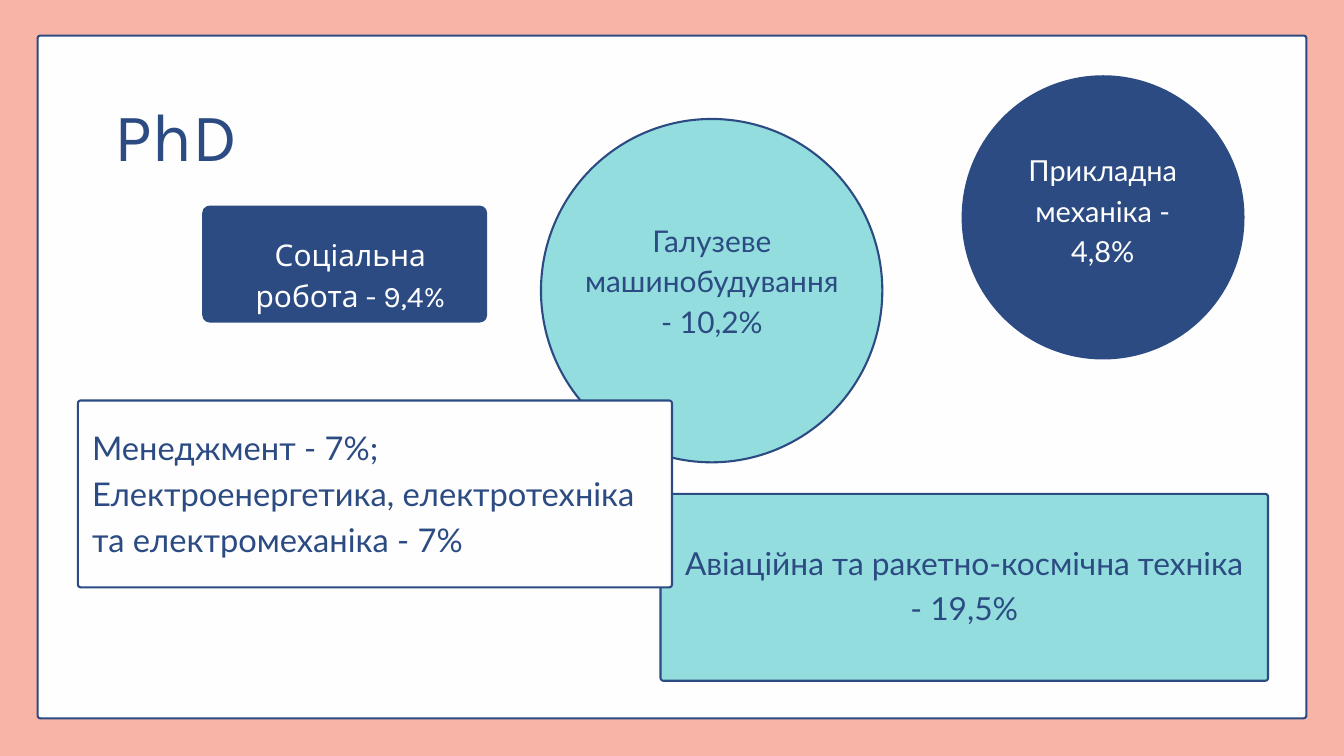
from dataclasses import dataclass
from typing import Optional

from pptx import Presentation
from pptx.dml.color import RGBColor
from pptx.enum.shapes import MSO_SHAPE
from pptx.enum.text import MSO_ANCHOR, MSO_AUTO_SIZE, PP_ALIGN
from pptx.util import Inches, Pt

ROUND, OVAL = MSO_SHAPE.ROUNDED_RECTANGLE, MSO_SHAPE.OVAL
LEFT, CENTER = PP_ALIGN.LEFT, PP_ALIGN.CENTER
TOP, MIDDLE = MSO_ANCHOR.TOP, MSO_ANCHOR.MIDDLE
FIXED = MSO_AUTO_SIZE.NONE

PINK = RGBColor(0xF7, 0xB4, 0xA7)
WHITE = RGBColor(0xFE, 0xFE, 0xFE)
NAVY = RGBColor(0x2B, 0x4B, 0x82)
AQUA = RGBColor(0x94, 0xDD, 0xDE)

Box = tuple[float, float, float, float]


@dataclass
class Card:
    text: str
    kind: MSO_SHAPE
    box: Box
    area: Box  # where the text sits
    fill: RGBColor
    size: float
    lead: float
    pad: float
    ink: RGBColor = NAVY
    line: Optional[RGBColor] = NAVY
    font: str = "Lato"
    align: PP_ALIGN = CENTER
    curve: float = 0.04  # corner radius in inches


CARDS = [
    Card("Соціальна робота - 9,4%", ROUND, (3.01, 3.06, 4.24, 1.74),
         (3.01, 2.9, 4.41, 2.3), NAVY, 32, 44.8, 0.28,
         ink=WHITE, line=None, font="Karla", curve=0.11),
    Card("Авіаційна та ракетно-космічна техніка - 19,5%", ROUND,
         (9.83, 7.35, 9.04, 2.78), (9.83, 7.21, 9.04, 2.91),
         AQUA, 34, 47.6, 0.28),
    Card("Галузеве машинобудування - 10,2%", OVAL, (8.05, 1.77, 5.08, 5.11),
         (8.52, 1.89, 4.15, 4.51), AQUA, 32, 43.4, 0.14),
    Card("Менеджмент - 7%; Електроенергетика, електротехніка "
         "та електромеханіка - 7%", ROUND, (1.16, 5.96, 8.84, 2.78),
         (1.16, 5.86, 8.84, 2.87), WHITE, 35, 49, 0.21, align=LEFT),
    Card("Прикладна механіка - 4,8%", OVAL, (14.31, 1.12, 4.21, 4.23),
         (14.69, 1.22, 3.44, 3.74), NAVY, 31, 43.4, 0.28,
         ink=WHITE, line=None),
]


def write(shape, text: str, *, size: float, lead: float, font: str = "Lato",
          ink: RGBColor = NAVY, align: PP_ALIGN = LEFT,
          anchor: MSO_ANCHOR = MIDDLE, pad: float = 0) -> None:
    frame = shape.text_frame
    frame.word_wrap = True
    frame.auto_size = FIXED
    frame.vertical_anchor = anchor
    frame.margin_left = frame.margin_right = Inches(pad)
    frame.margin_top = frame.margin_bottom = Inches(pad)
    para = frame.paragraphs[0]
    para.alignment = align
    para.line_spacing = Pt(lead)
    run = para.add_run()
    run.text = text
    run.font.name = font
    run.font.size = Pt(size)
    run.font.color.rgb = ink


def draw_shape(slide, kind: MSO_SHAPE, box: Box, fill: RGBColor,
               line: Optional[RGBColor] = NAVY, curve: float = 0.04) -> None:
    shape = slide.shapes.add_shape(kind, *map(Inches, box))
    shape.shadow.inherit = False
    shape.fill.solid()
    shape.fill.fore_color.rgb = fill
    if line is None:
        shape.line.fill.background()
    else:
        shape.line.color.rgb = line
        shape.line.width = Pt(2.25)
    if kind == ROUND:
        shape.adjustments[0] = curve / min(box[2:])


def draw_card(slide, card: Card) -> None:
    draw_shape(slide, card.kind, card.box, card.fill, card.line, card.curve)
    label = slide.shapes.add_textbox(*map(Inches, card.area))
    write(label, card.text, size=card.size, lead=card.lead, font=card.font,
          ink=card.ink, align=card.align, pad=card.pad)


def draw_title(slide, text: str, box: Box) -> None:
    title = slide.shapes.title
    title.left, title.top, title.width, title.height = map(Inches, box)
    write(title, text, size=73, lead=87.6, font="Karla", anchor=TOP)
    # Bring the title in front of the panel
    title.element.getparent().append(title.element)


def main() -> None:
    deck = Presentation()
    deck.slide_width, deck.slide_height = Inches(20), Inches(11.25)
    slide = deck.slides.add_slide(deck.slide_layouts[5])

    # Background and main panel
    back = slide.background.fill
    back.solid()
    back.fore_color.rgb = PINK
    draw_shape(slide, ROUND, (0.56, 0.53, 18.88, 10.16), WHITE)

    # Fields of study, then the title
    for card in CARDS:
        draw_card(slide, card)
    draw_title(slide, "PhD", (1.7, 1.39, 8.3, 1.21))

    deck.save("out.pptx")


if __name__ == "__main__":
    main()
